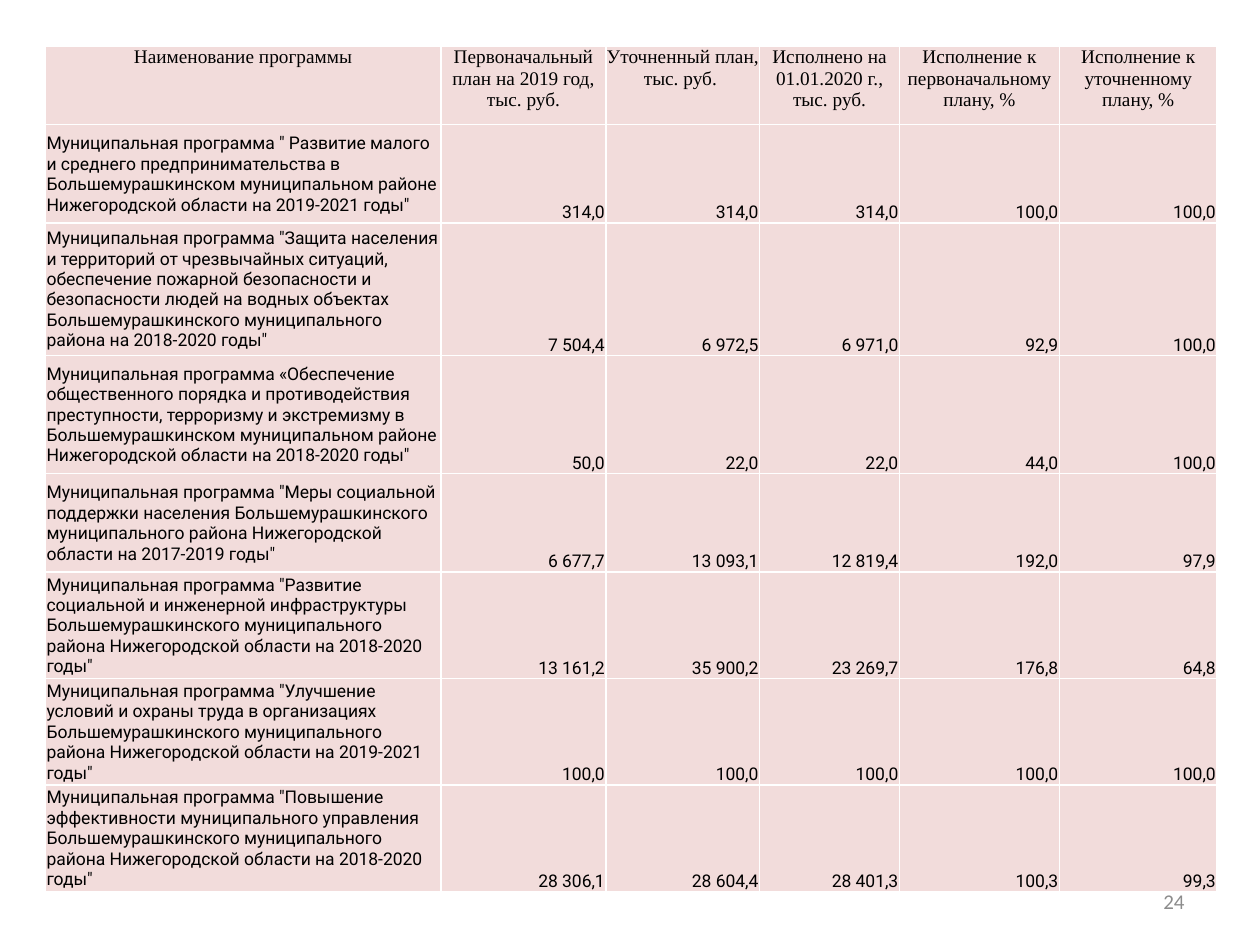
from lxml.etree import SubElement
from pptx import Presentation
from pptx.dml.color import RGBColor
from pptx.enum.text import MSO_ANCHOR, PP_ALIGN
from pptx.oxml import parse_xml
from pptx.oxml.ns import nsdecls
from pptx.util import Inches, Pt

HEADERS = [
    "Наименование программы",
    "Первоначальный план на 2019 год, тыс. руб.",
    "Уточненный план, \nтыс. руб. ",
    "Исполнено на 01.01.2020 г., тыс. руб.",
    "Исполнение к первоначальному плану, %",
    "Исполнение к уточненному плану, %",
]
PROGRAMS = [
    ('Муниципальная программа " Развитие малого и среднего предпринимательства в '
     'Большемурашкинском муниципальном районе Нижегородской области на 2019-2021 годы"',
     "314,0", "314,0", "314,0", "100,0", "100,0"),
    ('Муниципальная программа "Защита населения и территорий от чрезвычайных ситуаций, '
     'обеспечение пожарной безопасности и безопасности людей на водных объектах '
     'Большемурашкинского муниципального района на 2018-2020 годы"',
     "7 504,4", "6 972,5", "6 971,0", "92,9", "100,0"),
    ('Муниципальная программа «Обеспечение общественного порядка и противодействия '
     'преступности, терроризму и экстремизму в Большемурашкинском муниципальном районе '
     'Нижегородской области на 2018-2020 годы"',
     "50,0", "22,0", "22,0", "44,0", "100,0"),
    ('Муниципальная программа "Меры социальной поддержки населения Большемурашкинского '
     'муниципального района Нижегородской области на 2017-2019 годы"',
     "6 677,7", "13 093,1", "12 819,4", "192,0", "97,9"),
    ('Муниципальная программа "Развитие социальной и инженерной инфраструктуры '
     'Большемурашкинского муниципального района Нижегородской области на 2018-2020 годы"',
     "13 161,2", "35 900,2", "23 269,7", "176,8", "64,8"),
    ('Муниципальная программа "Улучшение условий и охраны труда в организациях '
     'Большемурашкинского муниципального района Нижегородской области на 2019-2021 годы"',
     "100,0", "100,0", "100,0", "100,0", "100,0"),
    ('Муниципальная программа "Повышение эффективности муниципального управления '
     'Большемурашкинского муниципального района Нижегородской области на 2018-2020 годы"',
     "28 306,1", "28 604,4", "28 401,3", "100,3", "99,3"),
]
COLUMN_WIDTHS = [3.14, 1.31, 1.22, 1.11, 1.27, 1.25]
ROW_HEIGHTS = [0.62, 0.78, 1.05, 0.94, 0.78, 0.82, 0.82, 0.82]
PINK, WHITE, BLACK, GRAY = "F2DCDB", "FFFFFF", "000000", "8C8C8C"


def color(value):
    return RGBColor.from_string(value)


def write(frame, text, font_name, size, text_color, alignment):
    frame.text = text
    frame.word_wrap = True
    for paragraph in frame.paragraphs:
        paragraph.alignment = alignment
        paragraph.font.name = font_name
        paragraph.font.size = Pt(size)
        paragraph.font.color.rgb = color(text_color)


def set_borders(cell, line_color, width):
    properties = cell._tc.get_or_add_tcPr()
    for position, side in enumerate(("lnL", "lnR", "lnT", "lnB")):
        properties.insert(position, parse_xml(
            f'<a:{side} {nsdecls("a")} w="{Pt(width)}"><a:solidFill>'
            f'<a:srgbClr val="{line_color}"/></a:solidFill></a:{side}>'))


def fill_cell(cell, text, row, column):
    inset = 0.01 if row else 0
    cell.margin_left = cell.margin_right = cell.margin_top = Inches(inset)
    cell.margin_bottom = 0
    if row == 0:
        anchor, style = MSO_ANCHOR.TOP, ("Times New Roman", 11, BLACK, PP_ALIGN.CENTER)
    elif column == 0:
        anchor, style = MSO_ANCHOR.MIDDLE, ("Roboto", 10, BLACK, PP_ALIGN.LEFT)
    else:
        anchor, style = MSO_ANCHOR.BOTTOM, ("Roboto", 10, BLACK, PP_ALIGN.RIGHT)
    cell.vertical_anchor = anchor
    write(cell.text_frame, text, *style)
    cell.fill.solid()
    cell.fill.fore_color.rgb = color(PINK)
    set_borders(cell, WHITE, 1)


def add_program_table(slide):
    rows = [HEADERS, *PROGRAMS]
    table = slide.shapes.add_table(
        len(rows), len(HEADERS), Inches(0.36), Inches(0.37),
        Inches(sum(COLUMN_WIDTHS)), Inches(sum(ROW_HEIGHTS))).table
    table.first_row = table.horz_banding = False
    for column, width in zip(table.columns, COLUMN_WIDTHS):
        column.width = Inches(width)
    for row, height in zip(table.rows, ROW_HEIGHTS):
        row.height = Inches(height)
    for row, texts in enumerate(rows):
        for column, text in enumerate(texts):
            fill_cell(table.cell(row, column), text, row, column)


def add_page_number(slide, number):
    box = slide.shapes.add_textbox(Inches(7.17), Inches(6.95), Inches(2.33), Inches(0.4))
    box.text_frame.vertical_anchor = MSO_ANCHOR.MIDDLE
    write(box.text_frame, number, "Calibri", 12, GRAY, PP_ALIGN.RIGHT)


def main():
    presentation = Presentation()
    presentation.slide_width, presentation.slide_height = Inches(10), Inches(7.5)
    slide = presentation.slides.add_slide(presentation.slide_layouts[6])
    add_page_number(slide, "24")
    add_program_table(slide)
    presentation.save("out.pptx")


if __name__ == "__main__":
    main()
